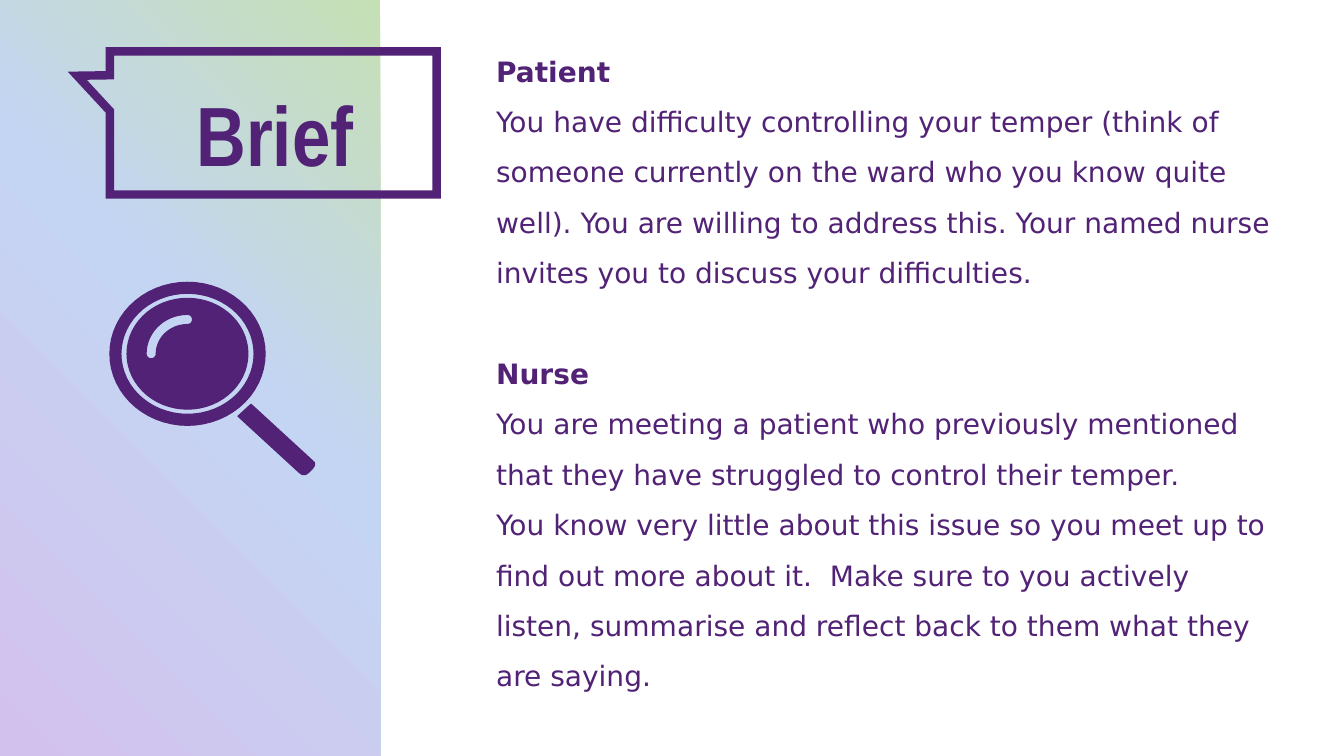
from dataclasses import dataclass
from math import cos, radians, sin

from lxml import etree
from pptx import Presentation
from pptx import util as u
from pptx.dml.color import RGBColor
from pptx.enum import shapes, text
from pptx.oxml import parse_xml
from pptx.oxml.ns import nsdecls, qn

COLORS = {
    "purple": "512275",
    "lilac": "D3C1ED",
    "sky": "C4D5F3",
    "leaf": "C5E0B4",
}
GRADIENT = {0: "lilac", 56: "sky", 100: "leaf"}
BODY_FONT = "DejaVu Sans"
TITLE_FONT = "Arial Narrow"
LENS_CENTRE = (1.86, 3.51)

Point = tuple[float, float]
Contour = list[Point]


@dataclass
class Box:
    left: float
    top: float
    width: float
    height: float

    def lengths(self) -> list[u.Length]:
        return [u.Inches(v) for v in (self.left, self.top, self.width, self.height)]


@dataclass
class BodyText:
    wording: str
    bold: bool = False
    space_before: int = 0


BODY = [
    BodyText("Patient", bold=True),
    BodyText(
        "You have difficulty controlling your temper (think of someone currently "
        "on the ward who you know quite well). You are willing to address this. "
        "Your named nurse invites you to discuss your difficulties."
    ),
    BodyText("Nurse", bold=True, space_before=36),
    BodyText(
        "You are meeting a patient who previously mentioned that they have "
        "struggled to control their temper."
    ),
    BodyText(
        "You know very little about this issue so you meet up to find out more "
        "about it.  Make sure to you actively listen, summarise and reflect back "
        "to them what they are saying."
    ),
]


def set_format(target, values: dict) -> None:
    for name, value in values.items():
        setattr(target, name, value)


def color(name: str) -> RGBColor:
    return RGBColor.from_string(COLORS[name])


def arc(centre: Point, radius_x: float, radius_y: float, start: int, end: int) -> Contour:
    """Points along an ellipse; degrees run clockwise from the right."""
    step = 6 if end > start else -6
    return [
        (centre[0] + radius_x * cos(radians(a)), centre[1] + radius_y * sin(radians(a)))
        for a in range(start, end + step, step)
    ]


def glint() -> Contour:
    """Quarter band with round ends, cut out of the lens."""
    x, y = LENS_CENTRE
    return (
        arc(LENS_CENTRE, 0.41, 0.39, 180, 270)
        + arc((x, y - 0.34), 0.05, 0.05, 270, 450)
        + arc(LENS_CENTRE, 0.31, 0.29, 270, 180)
        + arc((x - 0.36, y), 0.05, 0.05, 0, 180)
    )


def magnifier_parts() -> list[list[Contour]]:
    ring = [arc(LENS_CENTRE, 0.77, 0.71, 0, 360), arc(LENS_CENTRE, 0.66, 0.6, 360, 0)]
    lens = [arc(LENS_CENTRE, 0.6, 0.55, 360, 0), glint()]
    handle = [[
        (2.49, 4.01), (2.36, 4.13), (2.97, 4.69), (3, 4.71), (3.03, 4.71),
        (3.06, 4.69), (3.1, 4.65), (3.12, 4.62), (3.12, 4.59), (3.1, 4.57),
    ]]
    return [ring, lens, handle]


def draw_magnifier(slide) -> None:
    group = slide.shapes.add_group_shape()
    for contours in magnifier_parts():
        builder = None
        for contour in contours:
            points = [(u.Inches(x), u.Inches(y)) for x, y in contour]
            if builder is None:
                builder = group.shapes.build_freeform(*points[0], scale=1.0)
            else:
                builder.move_to(*points[0])
            builder.add_line_segments(points[1:], close=True)
        part = builder.convert_to_shape()
        part.shadow.inherit = False
        part.fill.solid()
        part.fill.fore_color.rgb = color("purple")
        part.line.color.rgb = color("purple")
        part.line.width = u.Pt(0.75)


def draw_panel(slide) -> None:
    panel = slide.shapes.add_shape(
        shapes.MSO_SHAPE.RECTANGLE, *Box(0, 0, 3.77, 7.5).lengths()
    )
    panel.shadow.inherit = False
    panel.line.fill.background()
    stops = "".join(
        f'<a:gs pos="{percent * 1000}"><a:srgbClr val="{COLORS[name]}"/></a:gs>'
        for percent, name in GRADIENT.items()
    )
    gradient = parse_xml(
        f'<a:gradFill {nsdecls("a")} rotWithShape="1"><a:gsLst>{stops}</a:gsLst>'
        '<a:path path="circle"><a:fillToRect t="100000" r="100000"/></a:path>'
        "</a:gradFill>"
    )
    panel._element.spPr.find(qn("a:prstGeom")).addnext(gradient)


def draw_callout(slide) -> None:
    callout = slide.shapes.add_shape(
        shapes.MSO_SHAPE.RECTANGULAR_CALLOUT, *Box(1.09, 0.51, 3.24, 1.42).lengths()
    )
    callout.shadow.inherit = False
    callout.adjustments[0] = -0.6
    callout.adjustments[1] = -0.33
    callout.fill.background()
    callout.line.color.rgb = color("purple")
    callout.line.width = u.Pt(6)
    outline = callout._element.spPr.find(qn("a:ln"))
    etree.SubElement(outline, qn("a:miter")).set("lim", "800000")


def place_text(slide, placeholder, box: Box, indent: float):
    """Move a placeholder in front of the shapes and give its frame a plain layout."""
    set_format(placeholder, dict(zip(("left", "top", "width", "height"), box.lengths())))
    slide.shapes._spTree.append(placeholder._element)
    frame = placeholder.text_frame
    set_format(frame, {
        "word_wrap": True,
        "auto_size": text.MSO_AUTO_SIZE.NONE,
        "vertical_anchor": text.MSO_ANCHOR.TOP,
        "margin_left": u.Inches(0.1 + indent),
    })
    return frame


def write_paragraph(paragraph, item: BodyText, font: str, size: int, spacing: float) -> None:
    paragraph.text = item.wording
    set_format(paragraph, {
        "alignment": text.PP_ALIGN.LEFT,
        "line_spacing": spacing,
        "space_before": u.Pt(item.space_before),
        "space_after": u.Pt(0),
    })
    properties = paragraph._p.get_or_add_pPr()
    properties.set("marL", "0")
    properties.set("indent", "0")
    etree.SubElement(properties, qn("a:buNone"))
    run_font = paragraph.runs[0].font
    set_format(run_font, {"name": font, "size": u.Pt(size), "bold": item.bold})
    run_font.color.rgb = color("purple")


def main() -> None:
    presentation = Presentation()
    presentation.slide_width = u.Inches(13.33)
    presentation.slide_height = u.Inches(7.5)
    slide = presentation.slides.add_slide(presentation.slide_layouts[1])

    draw_panel(slide)
    draw_callout(slide)
    title = place_text(slide, slide.shapes.title, Box(1.66, 0.57, 2.16, 1.31), 0.19)
    write_paragraph(title.paragraphs[0], BodyText("Brief", bold=True), TITLE_FONT, 60, 1.2)
    draw_magnifier(slide)
    body = place_text(slide, slide.placeholders[1], Box(4.82, 0.32, 7.92, 6.66), 0)
    for index, item in enumerate(BODY):
        paragraph = body.add_paragraph() if index else body.paragraphs[0]
        write_paragraph(paragraph, item, BODY_FONT, 20, 1.5)

    presentation.save("out.pptx")


if __name__ == "__main__":
    main()
